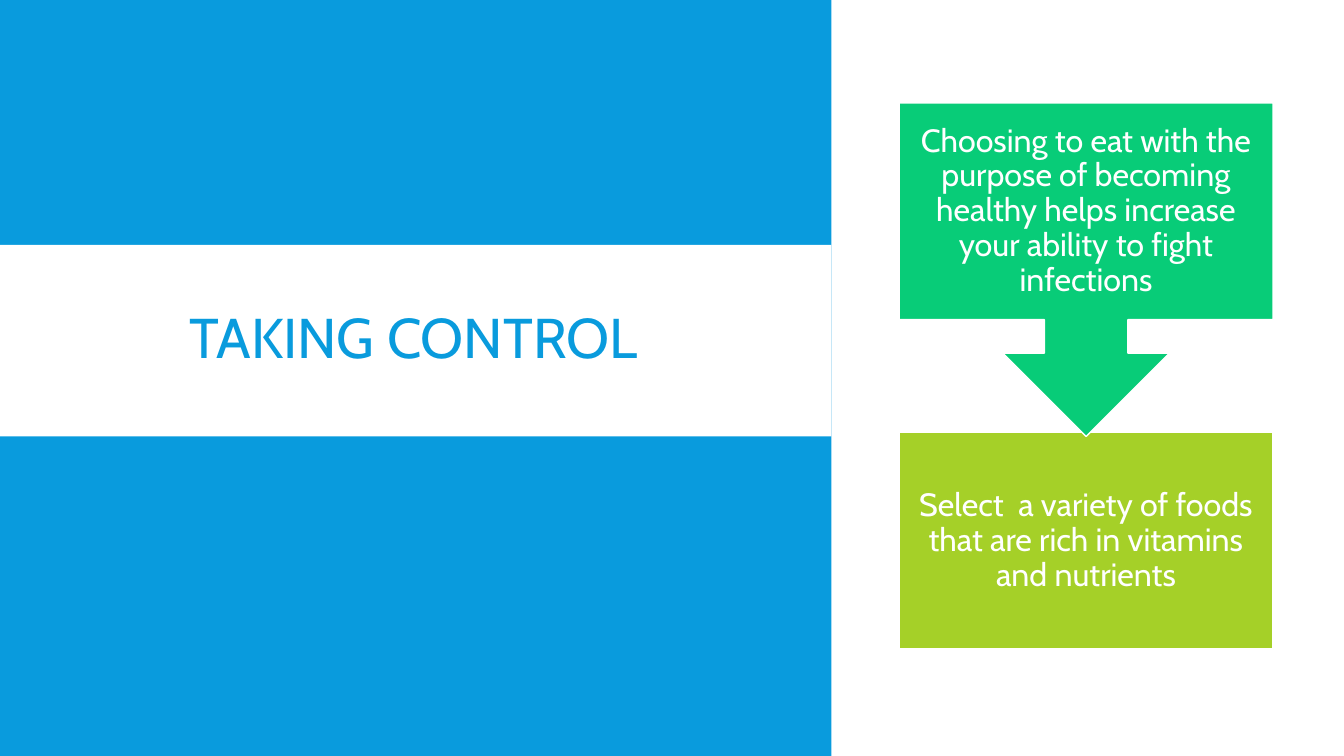
from pptx import Presentation
from pptx.dml.color import RGBColor
from pptx.enum.shapes import MSO_SHAPE
from pptx.enum.text import MSO_ANCHOR, PP_ALIGN
from pptx.util import Inches, Pt

COLORS = {"blue": "099BDD", "green": "08CC78", "lime": "A5D028", "white": "FFFFFF"}
COLS, ROWS = 160, 90
WIDE, HIGH = Inches(13.333), Inches(7.5)

PANEL = 99
BAND = (0, 29.16, PANEL, 22.8)
TITLE = (9.84, 30.72, 78.84, 19.8)
LEFT, WIDTH, BOX = 107.04, 44.52, 25.8
TOP, NEXT, CALLOUT = 12.24, 51.48, 39.72


def color(name):
    return RGBColor.from_string(COLORS[name])


def place(left, top, width, height):
    return (round(left * WIDE / COLS), round(top * HIGH / ROWS),
            round(width * WIDE / COLS), round(height * HIGH / ROWS))


def block(slide, area, fill, kind=MSO_SHAPE.RECTANGLE, edge=None, turn=0):
    shape = slide.shapes.add_shape(kind, *place(*area))
    shape.shadow.inherit = False
    shape.rotation = turn
    shape.fill.solid()
    shape.fill.fore_color.rgb = color(fill)
    if edge:
        shape.line.color.rgb = color(edge)
        shape.line.width = Pt(1)
    else:
        shape.line.fill.background()


def label(slide, area, words, size, tint, pitch, inset):
    frame = slide.shapes.add_textbox(*place(*area)).text_frame
    para = frame.paragraphs[0]
    run = para.add_run()
    run.text = words
    run.font.color.rgb = color(tint)
    formats = (
        (frame, {"word_wrap": True, "vertical_anchor": MSO_ANCHOR.MIDDLE}),
        (frame, {f"margin_{side}": Inches(inset)
                 for side in ("left", "top", "right", "bottom")}),
        (para, {"alignment": PP_ALIGN.CENTER, "line_spacing": pitch}),
        (run.font, {"name": "Cabin", "size": Pt(size)}),
    )
    for item, values in formats:
        for key, value in values.items():
            setattr(item, key, value)


def step(slide, top, words, fill, height=BOX, **style):
    block(slide, (LEFT, top, WIDTH, height), fill, edge="white", **style)
    label(slide, (LEFT, top, WIDTH, BOX), words, 23, "white", 0.9, 0.18)


def main():
    deck = Presentation()
    deck.slide_width, deck.slide_height = WIDE, HIGH
    slide = deck.slides.add_slide(deck.slide_layouts[6])

    block(slide, (0, 0, PANEL, ROWS), "blue")
    block(slide, BAND, "white")
    label(slide, TITLE, "TAKING CONTROL", 40, "blue", 0.85, 0.1)

    step(slide, NEXT, "Select  a variety of foods that are rich in vitamins and nutrients",
         "lime")
    step(slide, TOP, "Choosing to eat with the purpose of becoming healthy helps "
         "increase your ability to fight infections", "green", CALLOUT,
         kind=MSO_SHAPE.UP_ARROW_CALLOUT, turn=180)

    deck.save("out.pptx")


if __name__ == "__main__":
    main()
